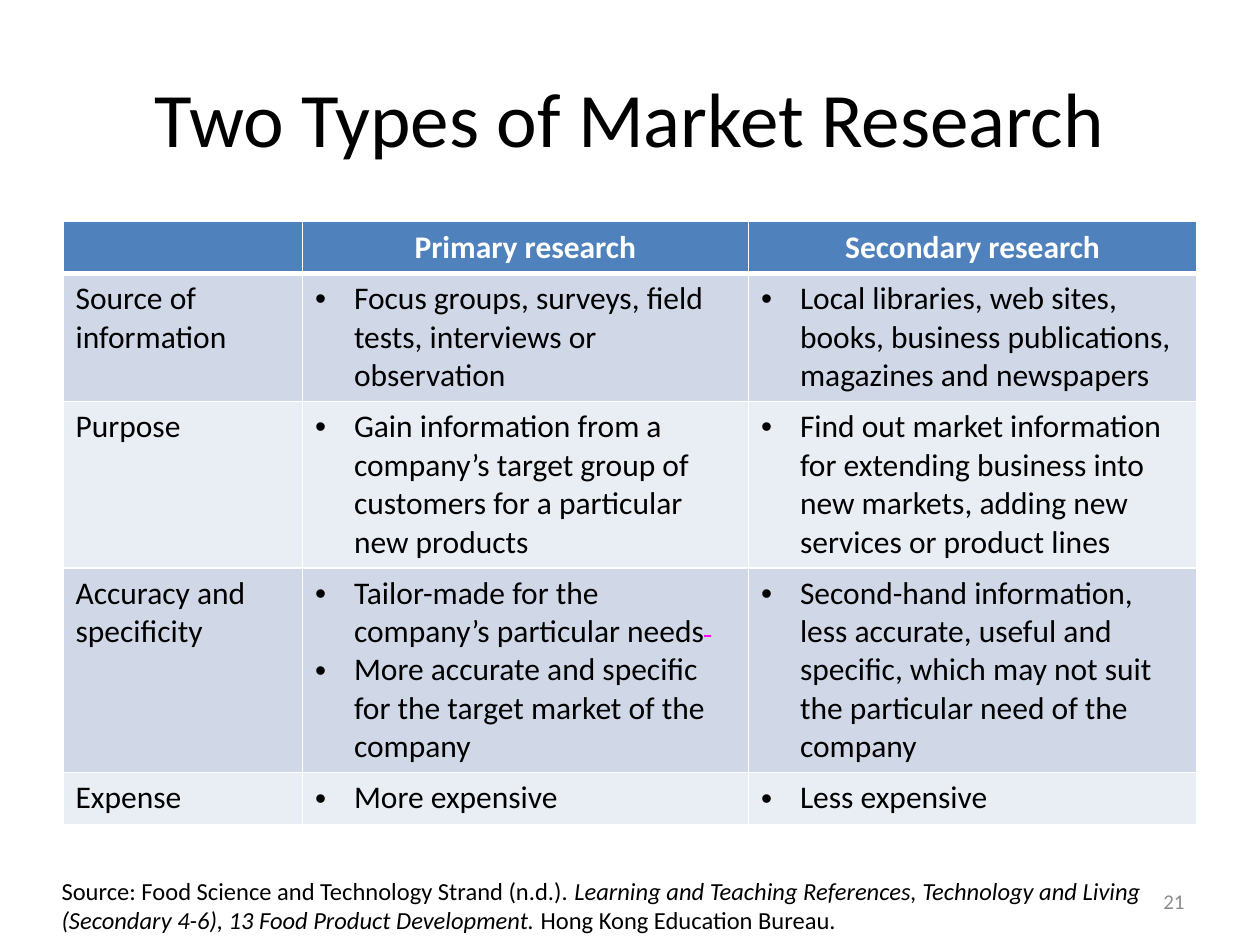
import pptx
import pptx.util
import pptx.dml.color
import pptx.enum.text
import lxml.etree
from pptx.oxml.ns import qn

Inches = pptx.util.Inches
Pt = pptx.util.Pt
Align = pptx.enum.text.PP_ALIGN
Anchor = pptx.enum.text.MSO_ANCHOR

HEAD = ["", "Primary research", "Secondary research"]
ROWS = [
    ("Source of information",
     ["Focus groups, surveys, field tests, interviews or observation"],
     ["Local libraries, web sites, books, business publications, magazines and newspapers"]),
    ("Purpose",
     ["Gain information from a company’s target group of customers for a particular new products"],
     ["Find out market information for extending business into new markets, "
      "adding new services or product lines"]),
    ("Accuracy and specificity",
     ["Tailor-made for the company’s particular needs",
      "More accurate and specific for the target market of the company"],
     ["Second-hand information, less accurate, useful and specific, "
      "which may not suit the particular need of the company"]),
    ("Expense", ["More expensive"], ["Less expensive"]),
]
WIDTHS = [1.9, 3.54, 3.56]
HEIGHTS = [0.41, 1.01, 1.32, 1.62, 0.41]


def color(code):
    return pptx.dml.color.RGBColor.from_string(code)


def write(para, text, size=18, ink="000000", bold=False, italic=False,
          strike=False, align=None, font="Calibri"):
    run = para.add_run()
    run.text = text
    run.font.name = font
    run.font.size = Pt(size)
    run.font.bold = bold
    run.font.italic = italic
    run.font.color.rgb = color(ink)
    if strike:
        run._r.get_or_add_rPr().set("strike", "sngStrike")
    if align is not None:
        para.alignment = align
    return run


def bullet(para):
    props = para._p.get_or_add_pPr()
    props.set("marL", str(Inches(0.31)))
    props.set("indent", str(-Inches(0.31)))
    lxml.etree.SubElement(props, qn("a:buFont"), typeface="Arial")
    lxml.etree.SubElement(props, qn("a:buChar"), char="•")


def border(cell, side, width, ink="FFFFFF"):
    props = cell._tc.get_or_add_tcPr()
    line = lxml.etree.SubElement(props, qn("a:ln" + side), w=str(Pt(width)))
    fill = lxml.etree.SubElement(line, qn("a:solidFill"))
    lxml.etree.SubElement(fill, qn("a:srgbClr"), val=ink)


class Deck:
    head = "4F81BD"
    bands = ["D0D8E8", "E9EDF4"]

    def __init__(self):
        self.show = pptx.Presentation()
        self.show.slide_width = Inches(10)
        self.show.slide_height = Inches(7.5)
        self.slide = self.show.slides.add_slide(self.show.slide_layouts[5])

    def title(self, text, left, top, width, height):
        shape = self.slide.shapes.title
        shape.left, shape.top = Inches(left), Inches(top)
        shape.width, shape.height = Inches(width), Inches(height)
        shape.text_frame.vertical_anchor = Anchor.MIDDLE
        write(shape.text_frame.paragraphs[0], text, size=44, align=Align.CENTER)

    def label(self, left, top, width, height, anchor=Anchor.TOP):
        box = self.slide.shapes.add_textbox(
            Inches(left), Inches(top), Inches(width), Inches(height))
        box.text_frame.word_wrap = True
        box.text_frame.vertical_anchor = anchor
        return box.text_frame.paragraphs[0]

    def cell(self, cell, row, fill):
        for side in "LRTB":
            thick = (row, side) in [(0, "B"), (1, "T")]
            border(cell, side, 3 if thick else 1)
        cell.fill.solid()
        cell.fill.fore_color.rgb = color(fill)

    def points(self, frame, items):
        for index, item in enumerate(items):
            para = frame.add_paragraph() if index else frame.paragraphs[0]
            bullet(para)
            write(para, item)

    def table(self, left, top):
        table = self.slide.shapes.add_table(
            len(HEIGHTS), len(WIDTHS), Inches(left), Inches(top),
            Inches(sum(WIDTHS)), Inches(sum(HEIGHTS))).table
        for column, width in zip(table.columns, WIDTHS):
            column.width = Inches(width)
        for row, height in zip(table.rows, HEIGHTS):
            row.height = Inches(height)
        for col, text in enumerate(HEAD):
            cell = table.cell(0, col)
            self.cell(cell, 0, self.head)
            if text:
                write(cell.text_frame.paragraphs[0], text, ink="FFFFFF",
                      bold=True, align=Align.CENTER)
        for row, (name, *lists) in enumerate(ROWS, 1):
            for col in range(len(WIDTHS)):
                self.cell(table.cell(row, col), row, self.bands[(row - 1) % 2])
            write(table.cell(row, 0).text_frame.paragraphs[0], name)
            for col, items in enumerate(lists, 1):
                self.points(table.cell(row, col).text_frame, items)
        return table


def main():
    deck = Deck()
    deck.title("Two Types of Market Research", 0.5, 0.3, 9, 1.25)
    table = deck.table(0.5, 1.76)
    needs = table.cell(3, 1).text_frame.paragraphs[0]
    write(needs, " ", ink="FF00FF", strike=True)
    page = deck.label(7.17, 6.95, 2.33, 0.4, Anchor.MIDDLE)
    write(page, "21", size=12, ink="8C8C8C", align=Align.RIGHT)
    source = deck.label(0.39, 6.9, 8.78, 0.88)
    write(source, "Source: Food Science and Technology Strand (n.d.). ", size=14)
    write(source, "Learning and Teaching References, Technology and Living "
          "(Secondary 4-6), 13 Food Product Development. ", size=14, italic=True)
    write(source, "Hong Kong Education Bureau.", size=14)
    deck.show.save("out.pptx")


if __name__ == "__main__":
    main()
